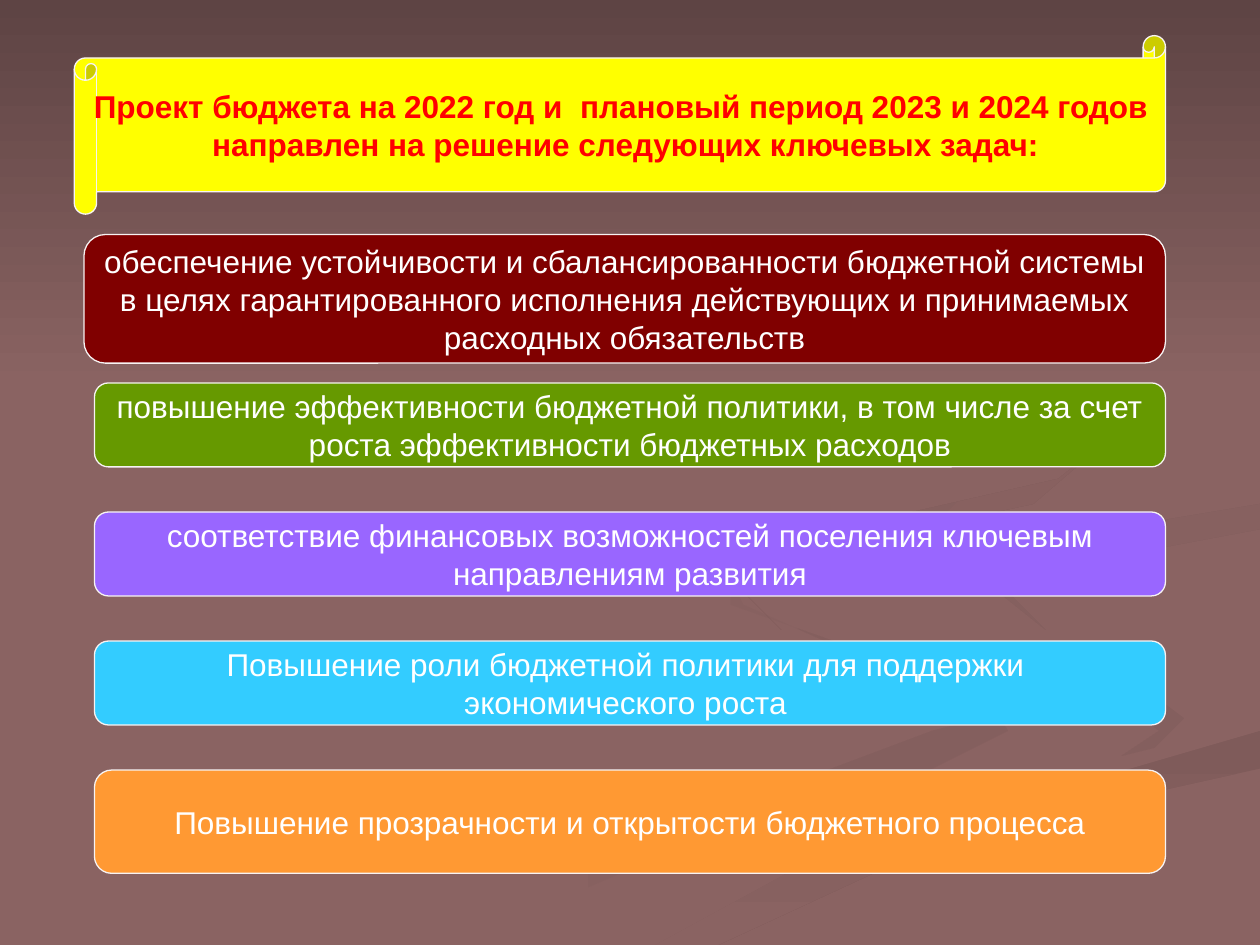
from pptx import Presentation
from pptx.dml.color import RGBColor
from pptx.enum.shapes import MSO_SHAPE
from pptx.enum.text import MSO_ANCHOR, PP_ALIGN
from pptx.util import Pt

SCROLL = MSO_SHAPE.HORIZONTAL_SCROLL
ROUND = MSO_SHAPE.FLOWCHART_ALTERNATE_PROCESS
RECT = MSO_SHAPE.RECTANGLE
MIDDLE = MSO_ANCHOR.MIDDLE
CENTER = PP_ALIGN.CENTER
UNIT = Pt(7.2)  # grid step of the swirl outlines

COLORS = {
    "base": "8A6362", "top": "5E4444", "soft": "845F5E", "tail": "7F5B5A",
    "leaf": "825E5D", "curl": "805C5B", "edge": "F7F3F3", "white": "FFFFFF",
    "red": "FF0000", "yellow": "FFFF00", "maroon": "800000", "green": "669900",
    "violet": "9966FF", "blue": "33CCFF", "orange": "FF9933",
}

# Swirls: start colour, end colour, clockwise angle, outline
SWIRLS = [
    ("base", "soft", 0, [
        (78.1, 55.3), (68, 51.9), (59.4, 48.5), (57.5, 45.9), (58.1, 48.4),
        (75, 54.3), (78.5, 57), (74, 58.5), (58, 63.9), (41.7, 69),
        (30, 74.9), (36.1, 74.9), (50, 68.7), (72, 62.3), (80, 58.1)]),
    ("base", "soft", 45, [
        (94.3, 57), (90.5, 54), (76, 49.8), (72.4, 46.4), (75.5, 50.5),
        (88, 54.9), (91.7, 57.6), (89.4, 60.5), (93.2, 58.9)]),
    ("tail", "base", 90, [
        (50.3, 74.9), (57.1, 74.9), (69.5, 69.2), (82, 65.1), (99.8, 60.9),
        (99.8, 58.1), (93, 60.3), (76.4, 64.7), (63, 69.3), (51.9, 74.7)]),
    ("base", "base", 0, [
        (72.5, 46.4), (76, 49.8), (90.5, 54), (94.3, 57), (91, 60),
        (74, 64.3), (57, 70.3), (47.7, 74.9), (51.9, 74.7), (63, 69.3),
        (76.5, 64.7), (99.9, 58.1), (99.9, 53.8), (85, 50.3), (78.1, 46.3),
        (82, 43.4), (99.9, 40.2), (99.9, 38.7), (77, 42.7)]),
    ("leaf", "base", 45, [
        (78.1, 46), (82.6, 49.6), (80.5, 47.2), (84.3, 44.8), (99.8, 42),
        (99.8, 40.2), (82, 43.4)]),
    ("curl", "base", 45, [
        (68.3, 43), (82.5, 40.2), (89.4, 34.4), (86.4, 29.1), (76.2, 23.3),
        (86.2, 29.2), (88.9, 33.5), (84.2, 37.8), (62.5, 42.6), (57.7, 46.2),
        (62.2, 50), (59.3, 47), (62.4, 44.4)]),
]

TITLE = ["Проект бюджета на 2022 год и  плановый период 2023 и 2024 годов ",
         "направлен на решение следующих ключевых задач:"]
FIRST = ["обеспечение устойчивости и сбалансированности бюджетной системы",
         "в целях гарантированного исполнения действующих и принимаемых",
         "расходных обязательств"]
# Tasks on an even pitch: colour, height, lines
TASKS = [
    ("green", 48, ["повышение эффективности бюджетной политики, в том числе за счет",
                   "роста эффективности бюджетных расходов"]),
    ("violet", 48, ["соответствие финансовых возможностей поселения ключевым",
                    "направлениям развития"]),
    ("blue", 48, ["Повышение роли бюджетной политики для поддержки ",
                  "экономического роста "]),
    ("orange", 59, ["Повышение прозрачности и открытости бюджетного процесса"]),
]
TOP, PITCH = 218.8, 73.75


def rgb(name):
    return RGBColor.from_string(COLORS[name])


class Deck:
    font = "Arial"
    size = 18

    def __init__(self, prs):
        self.slide = prs.slides.add_slide(prs.slide_layouts[6])

    def ground(self, color):
        fill = self.slide.background.fill
        fill.solid()
        fill.fore_color.rgb = rgb(color)

    def shade(self, shape, start, end, angle):
        shape.shadow.inherit = False
        shape.line.fill.background()
        shape.fill.gradient()
        shape.fill.gradient_angle = -angle % 360
        for stop, color in zip(shape.fill.gradient_stops, (start, end)):
            stop.color.rgb = rgb(color)

    def swirl(self, start, end, angle, points):
        pen = self.slide.shapes.build_freeform(*points[0], scale=UNIT)
        pen.add_line_segments(points[1:], close=True)
        self.shade(pen.convert_to_shape(), start, end, angle)

    def band(self, place, start, end):
        shape = self.slide.shapes.add_shape(RECT, *map(Pt, place))
        self.shade(shape, start, end, 90)

    def box(self, kind, place, fill, lines, color="white", bold=False):
        shape = self.slide.shapes.add_shape(kind, *map(Pt, place))
        shape.shadow.inherit = False
        shape.fill.solid()
        shape.fill.fore_color.rgb = rgb(fill)
        shape.line.color.rgb = rgb("edge")
        shape.line.width = Pt(0.75)
        frame = shape.text_frame
        frame.word_wrap = False
        frame.vertical_anchor = MIDDLE
        frame.text = "\n".join(lines)
        for para in frame.paragraphs:
            para.alignment = CENTER
            font = para.font
            font.name, font.size, font.bold = self.font, Pt(self.size), bold
            font.color.rgb = rgb(color)


def main():
    prs = Presentation()
    prs.slide_width, prs.slide_height = Pt(720), Pt(540)
    deck = Deck(prs)

    # Backdrop
    deck.ground("base")
    for swirl in SWIRLS:
        deck.swirl(*swirl)
    deck.band((0, 0, 720, 222), "top", "base")

    # Heading scroll
    deck.box(SCROLL, (42.5, 20.4, 623.5, 102), "yellow", TITLE, "red", True)

    # Task boxes
    deck.box(ROUND, (48, 134, 618, 73.5), "maroon", FIRST)
    for i, (fill, height, lines) in enumerate(TASKS):
        deck.box(ROUND, (54, TOP + i * PITCH, 612, height), fill, lines)

    prs.save("out.pptx")


if __name__ == "__main__":
    main()
